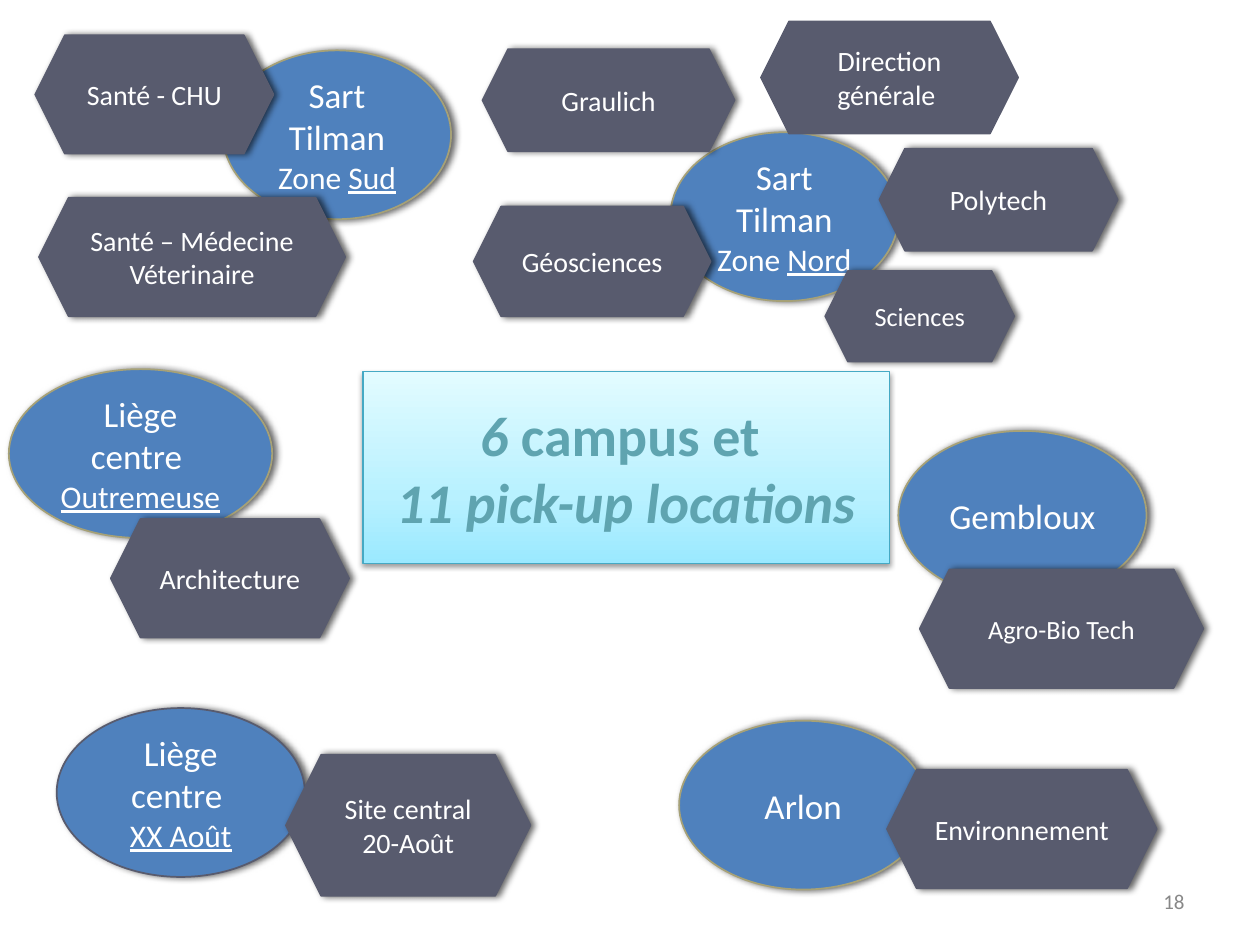
import copy
from dataclasses import dataclass

import pptx
import pptx.dml.color
import pptx.enum.shapes
import pptx.enum.text
import pptx.oxml
import pptx.oxml.ns
import pptx.util

Inches = pptx.util.Inches
SHAPES = pptx.enum.shapes.MSO_SHAPE
ALIGN = pptx.enum.text.PP_ALIGN


@dataclass(frozen=True)
class Theme:
    font: str = "Calibri"
    campus: str = "4F81BD"
    campus_edge: str = "A6A177"
    location: str = "585B6E"
    title: str = "5FA4B0"
    title_edge: str = "45A9C4"
    title_glow: tuple = ((0, "9BE9FF"), (0.35, "B8F1FF"), (1, "E2FBFF"))
    light: str = "FFFFFF"
    muted: str = "888888"
    title_size: int = 32
    campus_size: int = 20
    zone_size: int = 18
    location_size: int = 16
    number_size: int = 12


def rgb(value):
    return pptx.dml.color.RGBColor.from_string(value)


class CampusMap:
    def __init__(self, theme, slide):
        self.theme = theme
        self.slide = slide

    def label(self, holder, paragraphs, color, align=ALIGN.CENTER):
        frame = holder.text_frame
        frame_format = {
            "word_wrap": True,
            "auto_size": pptx.enum.text.MSO_AUTO_SIZE.NONE,
            "vertical_anchor": pptx.enum.text.MSO_ANCHOR.MIDDLE,
        }
        for name, value in frame_format.items():
            setattr(frame, name, value)
        for index, pieces in enumerate(paragraphs):
            paragraph = frame.add_paragraph() if index else frame.paragraphs[0]
            paragraph.alignment = align
            for text, size, extras in pieces:
                run = paragraph.add_run()
                run.text = text
                run.font.color.rgb = rgb(color)
                run_format = {"name": self.theme.font, "size": pptx.util.Pt(size), **extras}
                for name, value in run_format.items():
                    setattr(run.font, name, value)

    def outline(self, shape, color, width=1):
        shape.line.color.rgb = rgb(color)
        shape.line.width = pptx.util.Pt(width)

    def shade(self, shape, opacity=60, blur=4, distance=2, angle=0):
        effects = shape._element.spPr.find(pptx.oxml.ns.qn("a:effectLst"))
        effects.append(pptx.oxml.parse_xml(
            f'<a:outerShdw {pptx.oxml.ns.nsdecls("a")} blurRad="{pptx.util.Pt(blur)}" '
            f'dist="{pptx.util.Pt(distance)}" dir="{angle * 60000}" rotWithShape="0">'
            f'<a:srgbClr val="000000"><a:alpha val="{opacity * 1000}"/></a:srgbClr>'
            '</a:outerShdw>'))

    def block(self, preset, box, fill, edge, paragraphs, shaded=True):
        shape = self.slide.shapes.add_shape(preset, *map(Inches, box))
        shape.shadow.inherit = False
        shape.fill.solid()
        shape.fill.fore_color.rgb = rgb(fill)
        self.outline(shape, edge)
        if shaded:
            self.shade(shape)
        self.label(shape, paragraphs, self.theme.light)

    def campus(self, box, paragraphs, edge=None):
        self.block(SHAPES.OVAL, box, self.theme.campus,
                   edge or self.theme.campus_edge, paragraphs)

    def location(self, box, *lines, size=None, shaded=True):
        size = size or self.theme.location_size
        paragraphs = [[(line, size, {})] for line in lines]
        self.block(SHAPES.HEXAGON, box, self.theme.location,
                   self.theme.location, paragraphs, shaded)

    def title(self, box, paragraphs):
        title = self.slide.shapes.title
        for name, value in zip(("left", "top", "width", "height"), box):
            setattr(title, name, Inches(value))
        title.fill.gradient()
        title.fill.gradient_angle = 90
        stops = title._element.spPr.find(".//" + pptx.oxml.ns.qn("a:gsLst"))
        stops.insert(1, copy.deepcopy(stops[0]))
        for stop, (position, color) in zip(title.fill.gradient_stops, self.theme.title_glow):
            stop.position = position
            stop.color.rgb = rgb(color)
        self.outline(title, self.theme.title_edge, 0.75)
        title.shadow.inherit = False
        self.shade(title, opacity=38, blur=3.1, distance=1.6, angle=90)
        self.label(title, paragraphs, self.theme.title)

    def page_number(self, box, number):
        holder = self.slide.shapes.add_textbox(*map(Inches, box))
        self.label(holder, [[(number, self.theme.number_size, {})]],
                   self.theme.muted, ALIGN.RIGHT)


def main():
    theme = Theme()
    deck = pptx.Presentation()
    deck.slide_width, deck.slide_height = Inches(10), Inches(7.5)
    page = CampusMap(theme, deck.slides.add_slide(deck.slide_layouts[5]))

    upright = {"bold": True, "italic": False}
    slanted = {"bold": True, "italic": True}
    page.title((2.88, 2.95, 4.18, 1.52), [
        [("6 ", theme.title_size, slanted), ("campus et ", theme.title_size, upright)],
        [("11 pick-up locations", theme.title_size, slanted)],
    ])

    underlined = {"underline": True}
    for left, top, zone in ((1.77, 0.4, "Sud"), (5.32, 1.05, "Nord")):
        page.campus((left, top, 1.81, 1.34), [[
            ("Sart Tilman ", theme.campus_size, {}),
            ("Zone ", theme.zone_size, {}),
            (zone, theme.zone_size, underlined),
        ]])
    for left, top, town in ((7.13, 3.42, "Gembloux"), (5.39, 5.72, "Arlon")):
        page.campus((left, top, 1.97, 1.34), [[(town, theme.campus_size, {})]])
    for box, district, edge in (
        ((0.45, 5.62, 1.97, 1.34), "XX Août", theme.location),
        ((0.07, 2.93, 2.09, 1.34), "Outremeuse", theme.campus_edge),
    ):
        page.campus(box, [
            [("Liège centre ", theme.campus_size, {})],
            [(district, theme.zone_size, underlined)],
        ], edge)

    page.location((7.3, 4.52, 2.25, 0.94), "Agro-Bio Tech", size=15)
    page.location((7.04, 6.11, 2.14, 0.94), "Environnement")
    page.location((0.28, 0.28, 1.89, 0.94), "Santé - CHU")
    page.location((3.83, 0.39, 2, 0.81), "Graulich")
    page.location((6.55, 2.15, 1.5, 0.72), "Sciences", size=15)
    page.location((6.98, 1.18, 1.89, 0.81), "Polytech")
    page.location((3.76, 1.64, 1.88, 0.87), "Géosciences")
    page.location((6.04, 0.17, 2.04, 0.89), "Direction générale ", shaded=False)
    page.location((0.88, 4.12, 1.89, 0.94), "Architecture")
    page.location((2.27, 5.99, 1.94, 1.12), "Site central", "20-Août")
    page.location((0.31, 1.57, 2.43, 0.94), "Santé – Médecine Véterinaire")
    page.page_number((7.17, 6.95, 2.33, 0.4), "18")

    deck.save("out.pptx")


if __name__ == "__main__":
    main()
